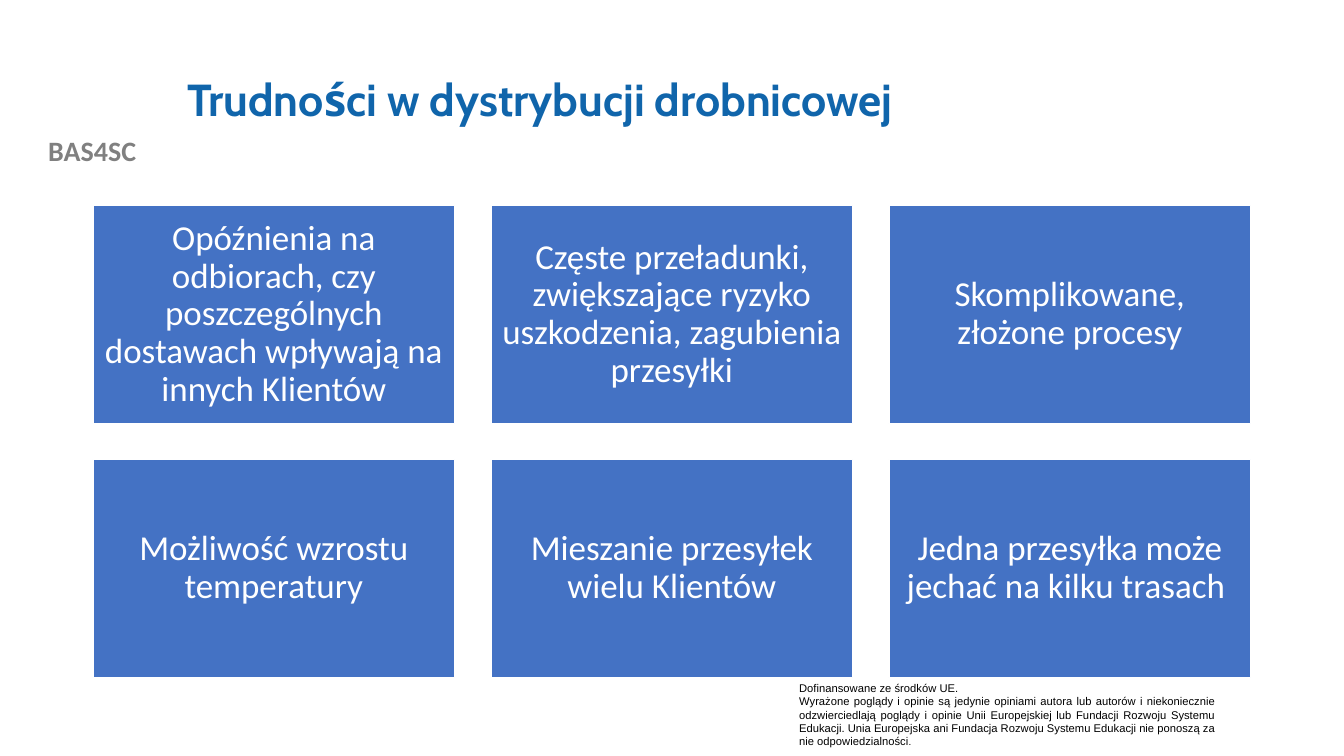
from pptx import Presentation
from pptx.dml.color import RGBColor
from pptx.enum.shapes import MSO_SHAPE as Preset
from pptx.enum.text import MSO_ANCHOR as Anchor, PP_ALIGN as Align
from pptx.util import Cm, Pt

# Content
TITLE = "Trudności w dystrybucji drobnicowej"
PROJECT = "BAS4SC"
DIFFICULTIES = [
    "Opóźnienia na odbiorach, czy poszczególnych dostawach wpływają na innych Klientów",
    "Częste przeładunki, zwiększające ryzyko uszkodzenia, zagubienia przesyłki",
    "Skomplikowane, złożone procesy",
    "Możliwość wzrostu temperatury",
    "Mieszanie przesyłek wielu Klientów",
    "Jedna przesyłka może jechać na kilku trasach ",
]
DISCLAIMER = [
    "Dofinansowane ze środków UE.",
    "Wyrażone poglądy i opinie są jedynie opiniami autora lub autorów i niekoniecznie "
    "odzwierciedlają poglądy i opinie Unii Europejskiej lub Fundacji Rozwoju Systemu "
    "Edukacji. Unia Europejska ani Fundacja Rozwoju Systemu Edukacji nie ponoszą za "
    "nie odpowiedzialności",
]

# Theme
WHITE = RGBColor(0xFF, 0xFF, 0xFF)
BLACK = RGBColor(0, 0, 0)
THEME = {
    "tile_fill": RGBColor(0x44, 0x72, 0xC4),
    "tile_line": WHITE,
    "title": {"name": "Cabin", "size": Pt(32), "bold": True, "color": RGBColor(0x10, 0x65, 0xAB)},
    "project": {"name": "Calibri", "size": Pt(20), "bold": True, "color": RGBColor(0x80, 0x80, 0x80)},
    "tile": {"name": "Calibri", "size": Pt(25), "color": WHITE},
    "disclaimer": {"name": "Arial", "size": Pt(8), "color": BLACK},
    "full_stop": {"name": "Arial", "size": Pt(7), "color": BLACK},
}

# Layout in centimetres
COLUMNS = 3
GRID_LEFT, GRID_TOP = 2.34, 5.18
TILE_WIDTH, TILE_HEIGHT, GAP = 9.12, 5.49, 0.91
TILE_INSET = 0.25


def add_run(paragraph, text, style):
    run = paragraph.add_run()
    run.text = text
    for name, value in THEME[style].items():
        if name == "color":
            run.font.color.rgb = value
        else:
            setattr(run.font, name, value)


def write(shape, lines, style, anchor=Anchor.TOP, **paragraph_format):
    frame = shape.text_frame
    frame.word_wrap = True
    frame.vertical_anchor = anchor
    for index, line in enumerate(lines):
        paragraph = frame.add_paragraph() if index else frame.paragraphs[0]
        for name, value in paragraph_format.items():
            setattr(paragraph, name, value)
        add_run(paragraph, line, style)
    return frame


def add_text(slide, box, lines, style, **text_format):
    textbox = slide.shapes.add_textbox(*map(Cm, box))
    return write(textbox, lines, style, **text_format)


def add_tile(slide, index, text):
    row, column = divmod(index, COLUMNS)
    left = GRID_LEFT + column * (TILE_WIDTH + GAP)
    top = GRID_TOP + row * (TILE_HEIGHT + GAP)
    tile = slide.shapes.add_shape(
        Preset.RECTANGLE, Cm(left), Cm(top), Cm(TILE_WIDTH), Cm(TILE_HEIGHT))
    tile.shadow.inherit = False
    tile.fill.solid()
    tile.fill.fore_color.rgb = THEME["tile_fill"]
    tile.line.color.rgb = THEME["tile_line"]
    tile.line.width = Pt(1)
    frame = write(tile, [text], "tile", Anchor.MIDDLE, alignment=Align.CENTER, line_spacing=0.9)
    for side in ("left", "top", "right", "bottom"):
        setattr(frame, f"margin_{side}", Cm(TILE_INSET))


def main():
    presentation = Presentation()
    presentation.slide_width, presentation.slide_height = Cm(33.87), Cm(19.05)
    slide = presentation.slides.add_slide(presentation.slide_layouts[6])

    # Project name and funding note
    add_text(slide, (0, 3.25, 4.65, 1.12), [PROJECT], "project", alignment=Align.CENTER)
    note = add_text(slide, (19.89, 17.04, 11, 1.96), DISCLAIMER, "disclaimer",
                    alignment=Align.JUSTIFY)
    add_run(note.paragraphs[-1], ".", "full_stop")

    # Title
    add_text(slide, (4.47, 1.02, 27.08, 3.1), [TITLE], "title",
             anchor=Anchor.MIDDLE, line_spacing=0.9)

    # Grid of difficulties
    for index, text in enumerate(DIFFICULTIES):
        add_tile(slide, index, text)

    presentation.save("out.pptx")


if __name__ == "__main__":
    main()
